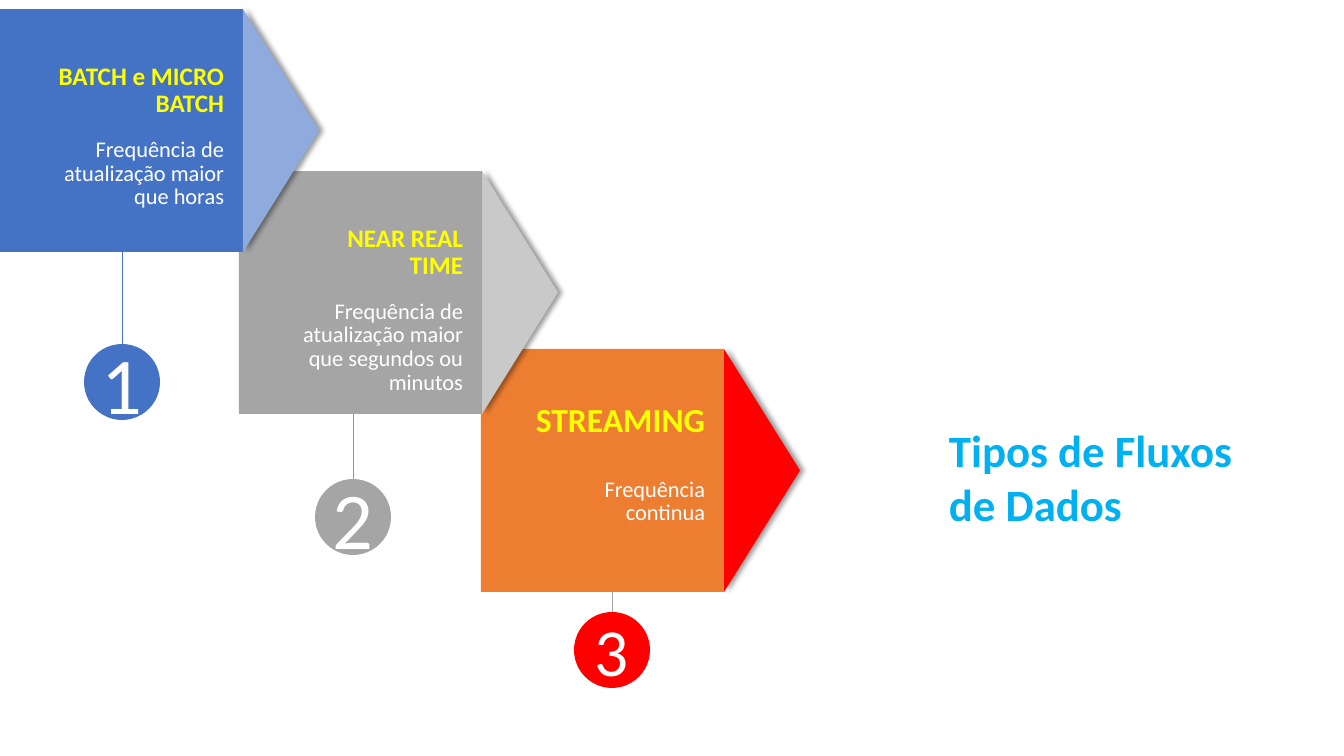
import pptx
import pptx.dml.color
import pptx.enum.shapes
import pptx.enum.text
import pptx.util
from lxml import etree

MSO_SHAPE = pptx.enum.shapes.MSO_SHAPE
ALIGN = pptx.enum.text.PP_ALIGN
EMU_PER_PX = 914400 / 100.8
BOX, TIP, BADGE = 243, 76, 76
DRAWING_NS = "http://schemas.openxmlformats.org/drawingml/2006/main"
SHADOW = (
    f'<a:effectLst xmlns:a="{DRAWING_NS}"><a:outerShdw blurRad="50800" dist="38100" dir="0" '
    'algn="l" rotWithShape="0"><a:srgbClr val="000000"><a:alpha val="40000"/></a:srgbClr>'
    "</a:outerShdw></a:effectLst>"
)


def px(length):
    return pptx.util.Emu(round(length * EMU_PER_PX))


def color(value):
    return pptx.dml.color.RGBColor.from_string(value)


class StepSlide:
    """Draws the elements of a staircase of data flows on one slide."""

    font = "Calibri"

    def __init__(self, slide):
        self.shapes = slide.shapes

    def set_text(self, frame, text, size, ink, align, bold=False, spacing=None):
        paragraph = frame.paragraphs[0]
        paragraph.text = text
        paragraph.alignment = align
        if spacing:
            paragraph.line_spacing = spacing
        paragraph.font.name = self.font
        paragraph.font.size = pptx.util.Pt(size)
        paragraph.font.bold = bold
        paragraph.font.color.rgb = color(ink)

    def text(self, x, y, width, height, text, size, ink, align=ALIGN.RIGHT, bold=False, spacing=0.89):
        frame = self.shapes.add_textbox(px(x), px(y), px(width), px(height)).text_frame
        frame.word_wrap = True
        frame.auto_size = pptx.enum.text.MSO_AUTO_SIZE.SHAPE_TO_FIT_TEXT
        self.set_text(frame, text, size, ink, align, bold, spacing)

    def solid(self, preset, x, y, width, height, fill):
        shape = self.shapes.add_shape(preset, px(x), px(y), px(width), px(height))
        shape.shadow.inherit = False
        shape.fill.solid()
        shape.fill.fore_color.rgb = color(fill)
        shape.line.fill.background()
        return shape

    def arrow(self, x, y, box_fill, tip_fill):
        self.solid(MSO_SHAPE.RECTANGLE, x, y, BOX, BOX, box_fill)
        tip = self.solid(MSO_SHAPE.ISOSCELES_TRIANGLE, x + (BOX + TIP) / 2,
                         y + (BOX - TIP) / 2, BOX, TIP, tip_fill)
        tip.rotation = 90
        properties = tip._element.spPr
        properties.replace(properties.find(f"{{{DRAWING_NS}}}effectLst"), etree.fromstring(SHADOW))

    def stem(self, x, start, end, ink):
        line = self.shapes.add_connector(
            pptx.enum.shapes.MSO_CONNECTOR.STRAIGHT, px(x), px(start), px(x), px(end))
        line.line.color.rgb = color(ink)
        line.line.width = pptx.util.Pt(0.5)
        etree.SubElement(line._element.spPr, f"{{{DRAWING_NS}}}effectLst")

    def badge(self, center, top, number, size, fill):
        circle = self.solid(MSO_SHAPE.OVAL, center - BADGE / 2, top, BADGE, BADGE, fill)
        frame = circle.text_frame
        frame.margin_left = frame.margin_right = frame.margin_top = frame.margin_bottom = 0
        frame.vertical_anchor = pptx.enum.text.MSO_ANCHOR.MIDDLE
        self.set_text(frame, number, size, "FFFFFF", ALIGN.CENTER)


STEPS = [
    dict(corner=(0, 9), fills=("4472C4", "8FAADC"), title=("BATCH e MICRO BATCH", 18, 194, 65),
         detail=("Frequência de atualização maior que horas", 83),
         stem=(122, 242, "4472C4"), badge=(344, "1", 57.5, "4472C4")),
    dict(corner=(239, 171), fills=("A5A5A5", "C9C9C9"), title=("NEAR REAL TIME", 18, 144, 65),
         detail=("Frequência de atualização maior que segundos ou minutos", 107),
         stem=(353, 309, "ED7D31"), badge=(479, "2", 57.5, "A5A5A5")),
    dict(corner=(481, 349), fills=("ED7D31", "FF0000"), title=("STREAMING", 24, 201, 46),
         detail=("Frequência continua", 58),
         stem=(612, 510, "A5A5A5"), badge=(612, "3", 48, "FF0000")),
]


def main():
    deck = pptx.Presentation()
    deck.slide_width, deck.slide_height = px(1344), px(756)
    flows = StepSlide(deck.slides.add_slide(deck.slide_layouts[6]))
    for step in reversed(STEPS):
        x, y = step["corner"]
        center, stem_end, stem_ink = step["stem"]
        badge_top, number, number_size, badge_fill = step["badge"]
        title, title_size, title_width, title_height = step["title"]
        detail, detail_height = step["detail"]
        text_right, detail_width = x + 234, 195
        flows.stem(center, badge_top, stem_end, stem_ink)
        flows.badge(center, badge_top, number, number_size, badge_fill)
        flows.arrow(x, y, *step["fills"])
        flows.text(text_right - detail_width, y + 124, detail_width, detail_height,
                   detail, 16, "FFFFFF")
        flows.text(text_right - title_width, y + 50, title_width, title_height,
                   title, title_size, "FFFF00", bold=True)
    flows.text(939, 418, 344, 119, "Tipos de Fluxos de Dados", 32, "00B0F0",
               align=ALIGN.LEFT, bold=True, spacing=None)
    deck.save("out.pptx")


if __name__ == "__main__":
    main()
